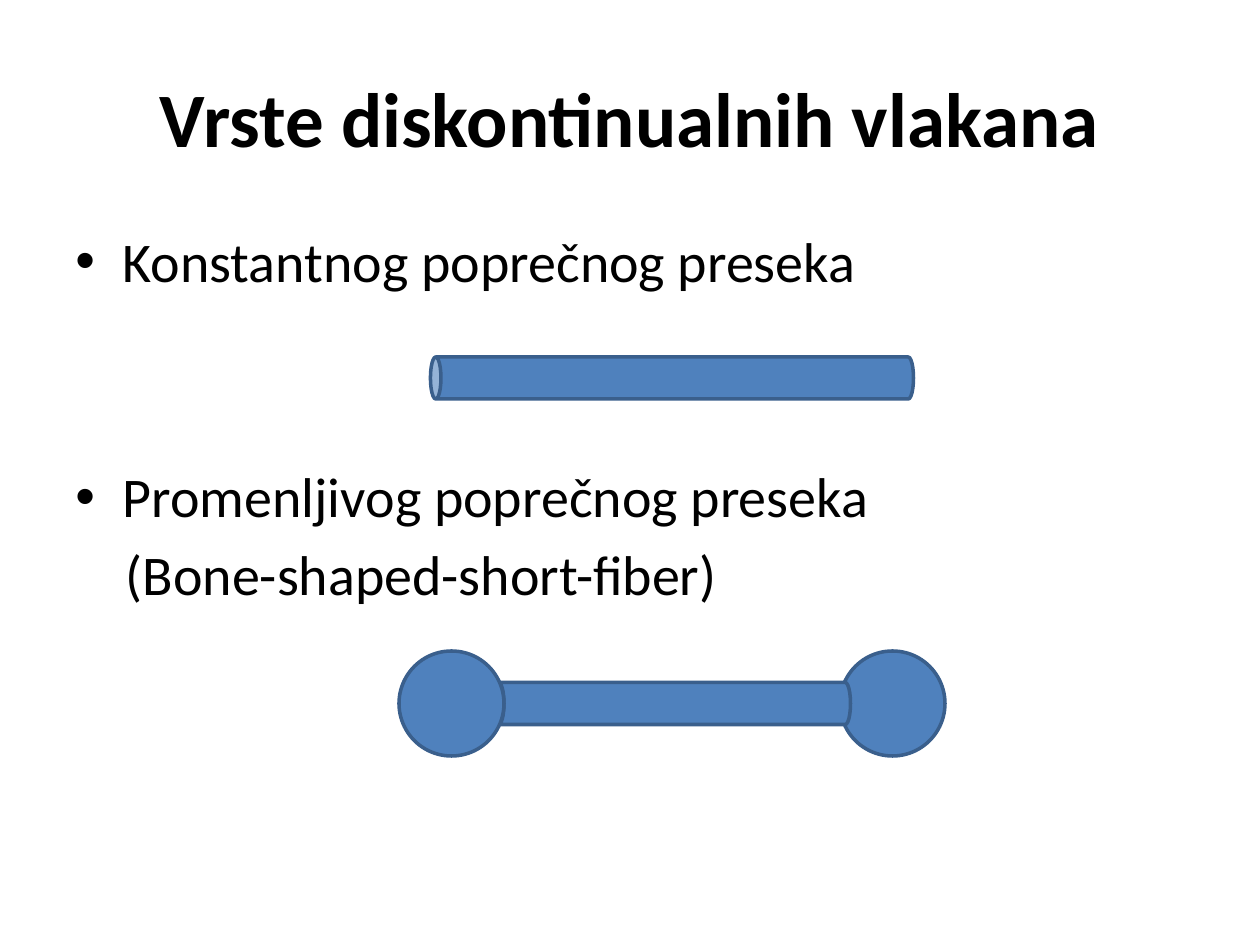
from lxml.etree import SubElement
from pptx import Presentation
from pptx.dml.color import RGBColor
from pptx.enum.shapes import MSO_SHAPE as Shape
from pptx.enum.text import MSO_ANCHOR as Anchor, PP_ALIGN as Align
from pptx.oxml.ns import qn
from pptx.util import Pt

PX = 7620
COLORS = {"text": "000000", "fiber": "4F81BD", "edge": "3A5F8C"}
BULLET_INDENT = 45
BODY_LINES = [
    {"text": "Konstantnog poprečnog preseka", "before": 6, "bullet": True},
    {"text": "Promenljivog poprečnog preseka", "before": 96, "bullet": True},
    {"text": "(Bone-shaped-short-fiber)", "before": 6, "bullet": False},
]


def color(name):
    return RGBColor.from_string(COLORS[name])


def set_all(target, values):
    for name, value in values.items():
        setattr(target, name, value)


def add_text_frame(page, box, anchor):
    frame = page.shapes.add_textbox(*(n * PX for n in box)).text_frame
    set_all(frame, {"word_wrap": True, "vertical_anchor": anchor})
    return frame


def add_span(para, text, size, bold=False):
    span = para.add_run()
    span.text = text
    set_all(span.font, {"name": "Calibri", "size": Pt(size), "bold": bold})
    span.font.color.rgb = color("text")


def indent(para, bullet):
    props = para._p.get_or_add_pPr()
    left, first = (BULLET_INDENT, -BULLET_INDENT) if bullet else (48, 0)
    props.set("marL", str(left * PX))
    props.set("indent", str(first * PX))
    if bullet:
        SubElement(props, qn("a:buFont"), typeface="Arial")
        SubElement(props, qn("a:buChar"), char="•")


def add_title(page, box):
    para = add_text_frame(page, box, Anchor.MIDDLE).paragraphs[0]
    para.alignment = Align.CENTER
    add_span(para, "Vrste diskontinualnih vlakana", 44, bold=True)


def add_body(page, box):
    frame = add_text_frame(page, box, Anchor.TOP)
    for number, line in enumerate(BODY_LINES):
        para = frame.add_paragraph() if number else frame.paragraphs[0]
        set_all(para, {"alignment": Align.LEFT, "space_before": Pt(line["before"])})
        indent(para, line["bullet"])
        add_span(para, line["text"], 32)


def add_solid(shapes, kind, box):
    solid = shapes.add_shape(kind, *(n * PX for n in box))
    solid.shadow.inherit = False
    solid.fill.solid()
    solid.fill.fore_color.rgb = color("fiber")
    solid.line.color.rgb = color("edge")
    solid.line.width = Pt(2)
    return solid


def add_rod(shapes, box):
    left, top, width, height = box
    shift = (width - height) // 2
    upright = (left + shift, top - shift, height, width)
    add_solid(shapes, Shape.CAN, upright).rotation = 270


def add_bone(page, box):
    left, top, width, ball = box
    overlap, thickness = 10, 40
    shapes = page.shapes.add_group_shape().shapes
    add_solid(shapes, Shape.OVAL, (left + width - ball, top, ball, ball))
    reach = ball - overlap
    add_rod(shapes, (left + reach, top + (ball - thickness) // 2,
                     width - 2 * reach, thickness))
    add_solid(shapes, Shape.OVAL, (left, top, ball, ball))


def main():
    deck = Presentation()
    set_all(deck, {"slide_width": 1200 * PX, "slide_height": 900 * PX})
    page = deck.slides.add_slide(deck.slide_layouts[6])
    add_title(page, (60, 36, 1080, 150))
    add_body(page, (60, 210, 1080, 594))
    add_rod(page.shapes, (410, 340, 460, 40))
    add_bone(page, (380, 620, 520, 100))
    deck.save("out.pptx")


if __name__ == "__main__":
    main()
